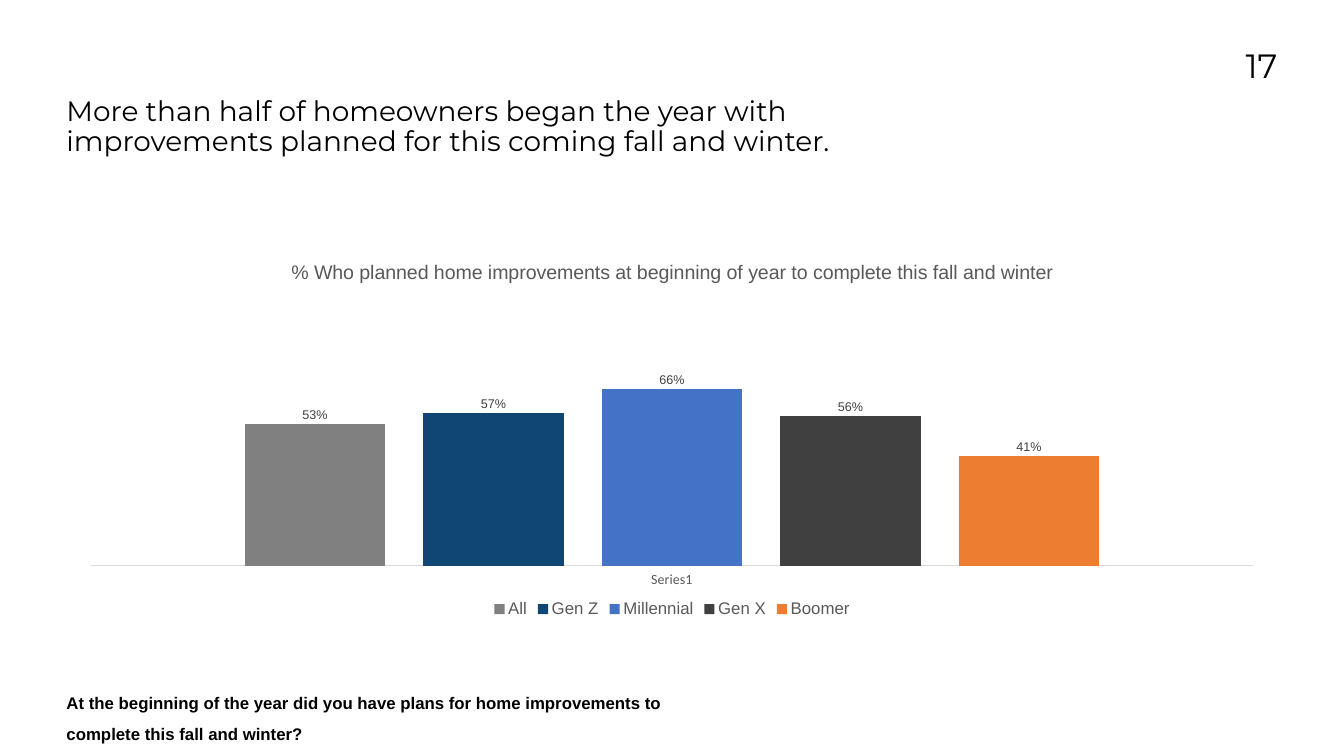
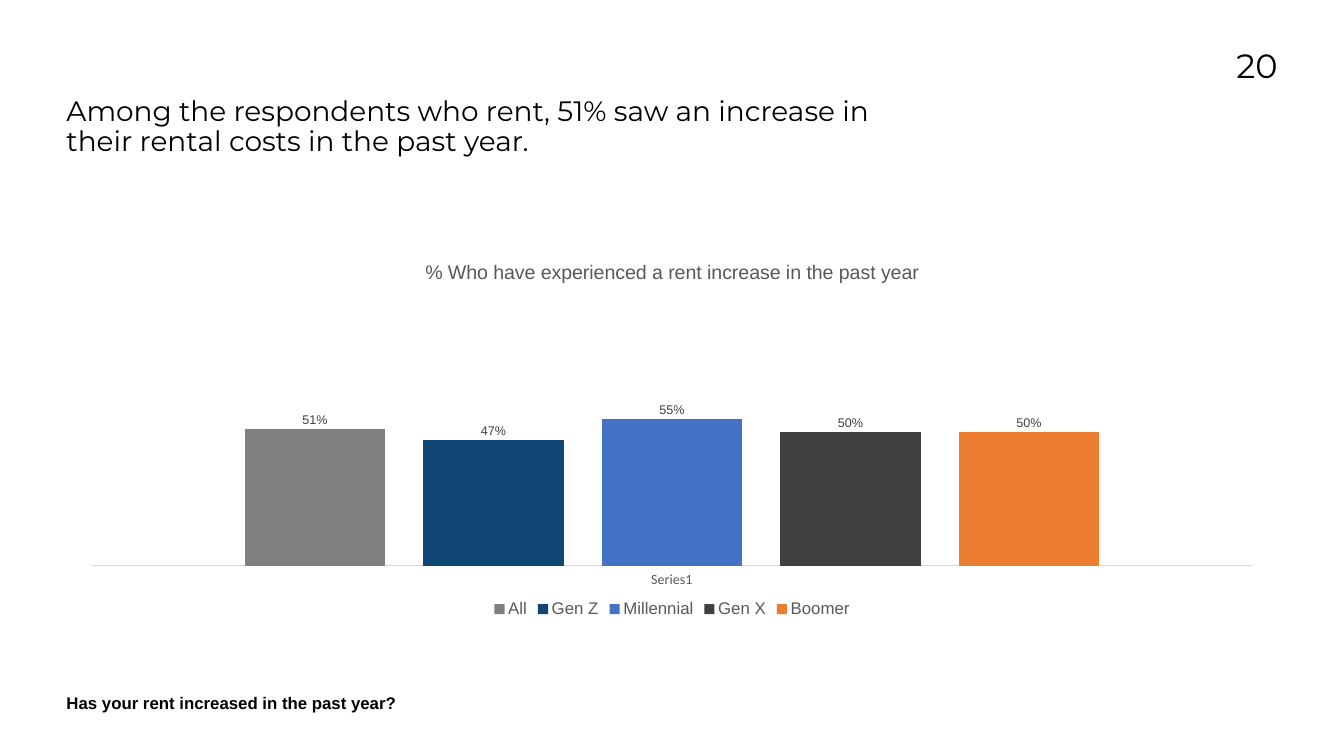
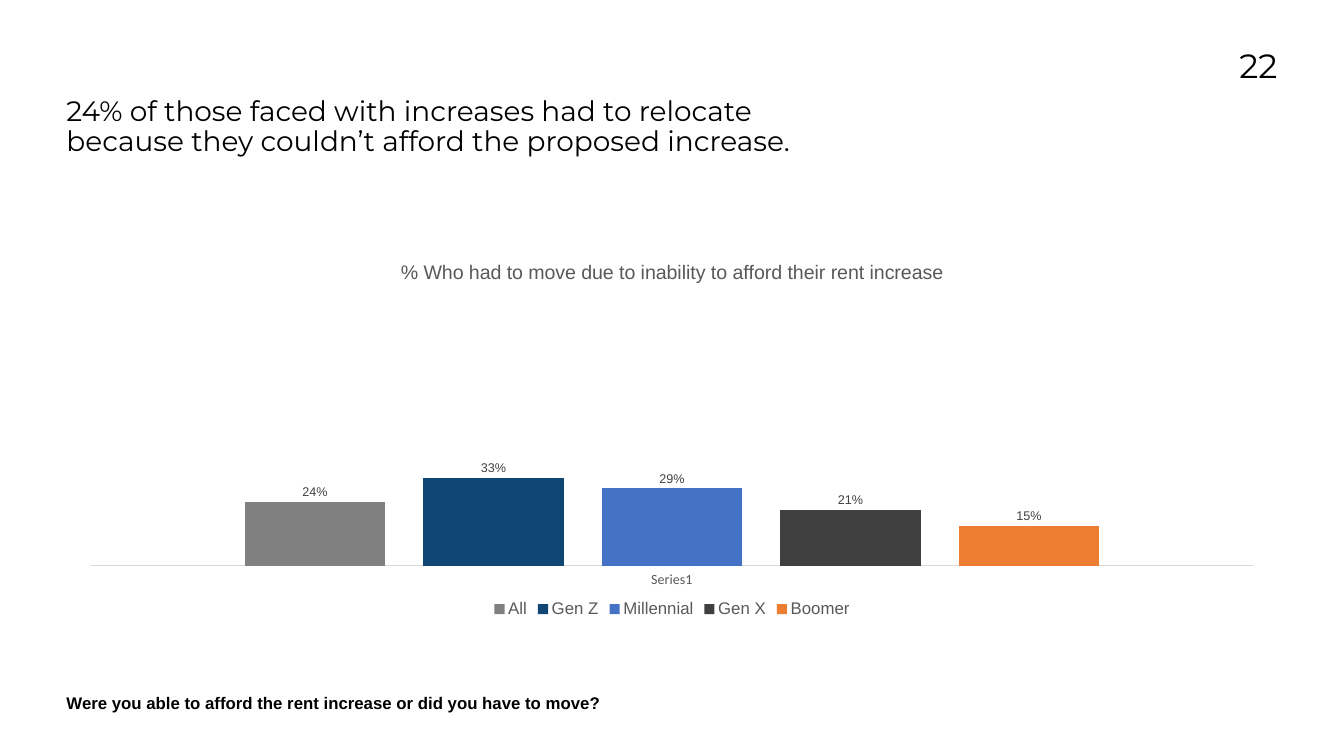
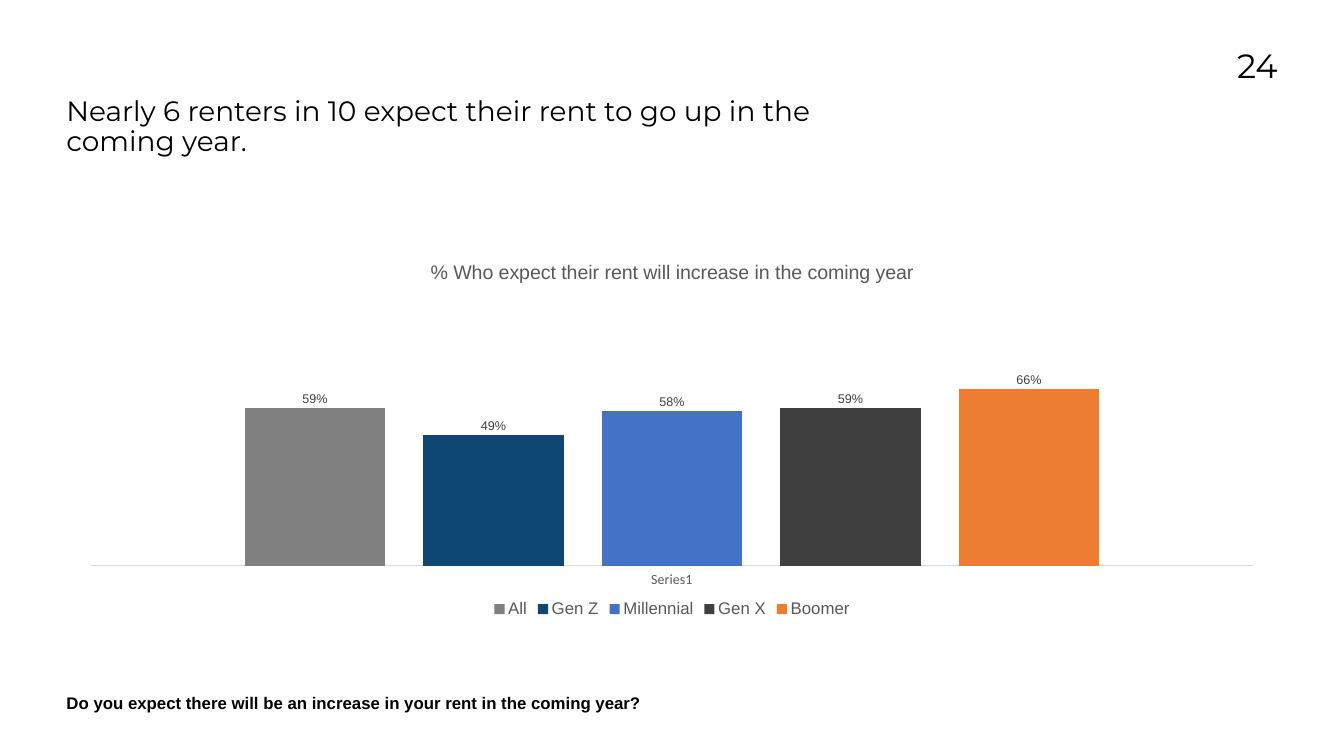
from lxml.etree import SubElement as Sub
from pptx import Presentation
from pptx.chart.data import CategoryChartData as Data
from pptx.dml.color import RGBColor as Rgb
from pptx.enum.chart import XL_CHART_TYPE as Kind
from pptx.enum.chart import XL_LABEL_POSITION as Spot
from pptx.enum.chart import XL_LEGEND_POSITION as Side
from pptx.enum.chart import XL_TICK_LABEL_POSITION as Near
from pptx.enum.chart import XL_TICK_MARK as Tick
from pptx.enum.text import MSO_ANCHOR as Anchor
from pptx.enum.text import MSO_AUTO_SIZE as Fit
from pptx.enum.text import PP_ALIGN as Align
from pptx.oxml.ns import qn
from pptx.util import Cm, Pt

# Shared style
HUES = {
    "ink": "000000", "label": "404040", "soft": "595959", "rule": "D9D9D9",
    "All": "808080", "Gen Z": "104674", "Millennial": "4472C4",
    "Gen X": "404040", "Boomer": "ED7D31",
}
GROUPS = ["All", "Gen Z", "Millennial", "Gen X", "Boomer"]
HEAD, BODY, AXIS = "Montserrat", "Arial", "Calibri"

# Page and text boxes in cm: left, top, width, height
WIDE, HIGH, EDGE = 67.74, 38.1, 3.35
PAGE = (0, 0, WIDE, HIGH)

# Number, headline, chart title, percentages by group, question
SLIDES = [
    ("17", "More than half of homeowners began the year with improvements "
     "planned for this coming fall and winter.",
     "% Who planned home improvements at beginning of year to complete "
     "this fall and winter",
     [53, 57, 66, 56, 41],
     "At the beginning of the year did you have plans for home improvements "
     "to complete this fall and winter?"),
    ("20", "Among the respondents who rent, 51% saw an increase in their "
     "rental costs in the past year.",
     "% Who have experienced a rent increase in the past year",
     [51, 47, 55, 50, 50],
     "Has your rent increased in the past year?"),
    ("22", "24% of those faced with increases had to relocate because they "
     "couldn’t afford the proposed increase.",
     "% Who had to move due to inability to afford their rent increase",
     [24, 33, 29, 21, 15],
     "Were you able to afford the rent increase or did you have to move?"),
    ("24", "Nearly 6 renters in 10 expect their rent to go up in the "
     "coming year.",
     "% Who expect their rent will increase in the coming year",
     [59, 49, 58, 59, 66],
     "Do you expect there will be an increase in your rent in the "
     "coming year?"),
]


def style(font, size, name=BODY, hue="ink", bold=False):
    font.size, font.name, font.bold = Pt(size), name, bold
    font.color.rgb = Rgb.from_string(HUES[hue])


def write(shape, text, box, align=Align.LEFT, lead=1.0, **form):
    """Place a text shape and fill it with one formatted paragraph."""
    shape.left, shape.top, shape.width, shape.height = map(Cm, box)
    frame = shape.text_frame
    frame.word_wrap, frame.auto_size = True, Fit.NONE
    frame.vertical_anchor = Anchor.TOP
    frame.margin_left = frame.margin_right = 0
    frame.margin_top = frame.margin_bottom = 0
    para = frame.paragraphs[0]
    props = para._p.get_or_add_pPr()
    props.set("marL", "0")
    props.set("indent", "0")
    Sub(props, qn("a:buNone"))
    para.alignment, para.line_spacing = align, lead
    para.space_before = Pt(0)
    run = para.add_run()
    run.text = text
    style(run.font, **form)


def layout(item, **parts):
    """Fix the place of a chart part as fractions of the chart."""
    node = item.find(qn("c:layout"))
    if node is None:
        node = item.makeelement(qn("c:layout"))
        text = item.find(qn("c:tx"))
        if text is None:
            item.insert(0, node)
        else:
            text.addnext(node)
    hold = Sub(node, qn("c:manualLayout"))
    for tag, val in parts.items():
        Sub(hold, qn("c:" + tag)).set("val", str(val))


def bars(slide, title, rates, box):
    data = Data(number_format="0%")
    data.categories = ["Series1"]
    for name, rate in zip(GROUPS, rates):
        data.add_series(name, [rate / 100])
    chart = slide.shapes.add_chart(
        Kind.COLUMN_CLUSTERED, *map(Cm, box), data).chart
    style(chart.font, 10, AXIS)

    # Title
    para = chart.chart_title.text_frame.paragraphs[0]
    run = para.add_run()
    run.text = title
    style(run.font, 28, hue="soft")
    chart.chart_title.include_in_layout = False

    # Columns and their labels
    plot = chart.plots[0]
    plot.gap_width, plot.overlap = 219, -27
    plot.vary_by_categories = False
    for ser in plot.series:
        ser.format.fill.solid()
        ser.format.fill.fore_color.rgb = Rgb.from_string(HUES[ser.name])
        tags = ser.data_labels
        tags.show_value, tags.position = True, Spot.OUTSIDE_END
        style(tags.font, 18, hue="label")
    layout(chart._chartSpace.chart.plotArea, layoutTarget="inner",
           xMode="edge", yMode="edge", x=0.02, y=0.14, w=0.96, h=0.71)

    # Axes
    base, scale = chart.category_axis, chart.value_axis
    base.major_tick_mark = base.minor_tick_mark = Tick.NONE
    base.tick_label_position = Near.LOW
    style(base.tick_labels.font, 20, AXIS, "soft")
    base.format.line.width = Pt(0.75)
    base.format.line.color.rgb = Rgb.from_string(HUES["rule"])
    scale.minimum_scale, scale.maximum_scale = 0, 1
    scale.has_major_gridlines = scale.visible = False
    scale.tick_labels.number_format = "0%"
    scale.tick_labels.number_format_is_linked = False

    # Legend
    chart.has_legend = True
    chart.legend.position = Side.BOTTOM
    chart.legend.include_in_layout = False
    style(chart.legend.font, 24, hue="soft")


def page(deck, box, num, head, title, rates, ask):
    """Build one survey slide inside the given box."""
    x, y, wide, high = box
    left, right = x + EDGE, x + wide - EDGE
    slide = deck.slides.add_slide(deck.slide_layouts[1])
    # Page number
    write(slide.shapes.add_textbox(0, 0, 0, 0), num,
          (right - 5.72, y + 2.24, 5.72, 4.17),
          align=Align.RIGHT, size=48, name=HEAD)
    # Chart
    bars(slide, title, rates, (left, y + 12.4, right - left, 18.95))
    # Headline and survey question
    write(slide.shapes.title, head, (left, y + 4.9, 40.67, 5.28),
          lead=0.9, size=40, name=HEAD)
    write(slide.placeholders[1], ask, (left, y + high - 3.68, 33.71, 1.65),
          lead=1.5, size=24, bold=True)


def main():
    deck = Presentation()
    deck.slide_width, deck.slide_height = Cm(WIDE), Cm(HIGH)
    for item in SLIDES:
        page(deck, PAGE, *item)
    deck.save("out.pptx")


if __name__ == "__main__":
    main()
